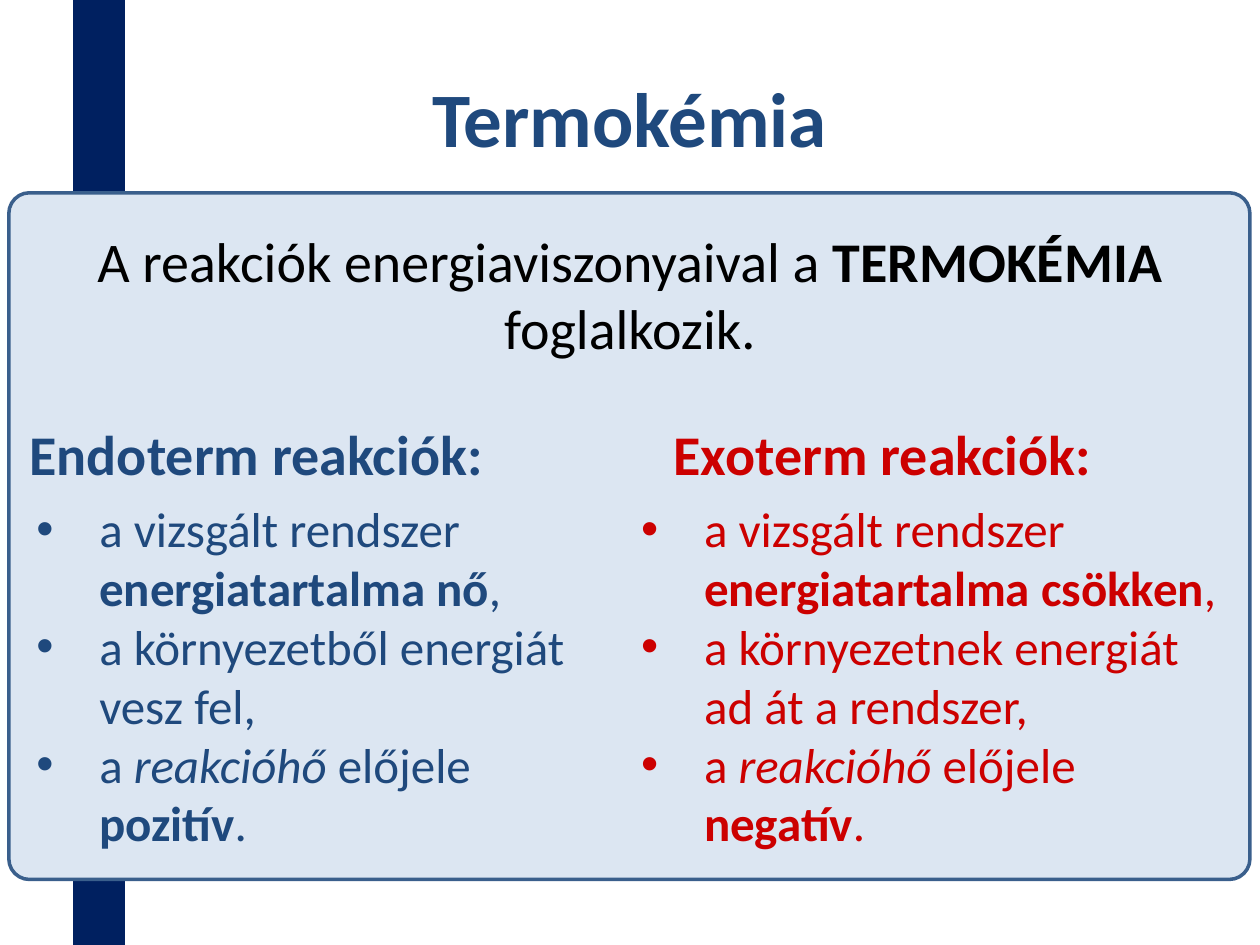
"""Build the thermochemistry slide comparing endothermic and exothermic reactions."""
from dataclasses import dataclass

from lxml import etree
from pptx import Presentation
from pptx.dml.color import RGBColor
from pptx.enum.shapes import MSO_SHAPE
from pptx.enum.text import MSO_ANCHOR, MSO_AUTO_SIZE, PP_ALIGN
from pptx.oxml.ns import qn
from pptx.util import Inches, Pt

RECT, ROUNDED = MSO_SHAPE.RECTANGLE, MSO_SHAPE.ROUNDED_RECTANGLE
TOP, MIDDLE = MSO_ANCHOR.TOP, MSO_ANCHOR.MIDDLE
LEFT, CENTER = PP_ALIGN.LEFT, PP_ALIGN.CENTER
FIT_SHAPE, NO_FIT = MSO_AUTO_SIZE.SHAPE_TO_FIT_TEXT, MSO_AUTO_SIZE.NONE

SLIDE_W, SLIDE_H = Inches(10), Inches(7.5)
COLS, ROWS = 100, 75
FONT = "Calibri"
NAVY, BLUE, RED, BLACK = "002060", "1F497D", "CC0000", "000000"
PANEL_FILL, PANEL_LINE = "DCE6F2", "3A5F8C"
HEADING_ROW, LIST_ROW = 32.8, 39.1


@dataclass(frozen=True)
class Box:
    """Hold a place in grid columns and rows."""
    col: float
    row: float
    cols: float
    rows: float

    def emu(self) -> tuple[int, int, int, int]:
        """Return left, top, width and height in EMU."""
        cell_w, cell_h = SLIDE_W / COLS, SLIDE_H / ROWS
        return (round(self.col * cell_w), round(self.row * cell_h),
                round(self.cols * cell_w), round(self.rows * cell_h))


@dataclass(frozen=True)
class Run:
    """Hold a piece of text with its emphasis."""
    text: str
    bold: bool = False
    italic: bool = False


@dataclass(frozen=True)
class Reaction:
    """Hold one reaction type and the words that set it apart."""
    heading: str
    color: str
    heading_box: Box
    list_box: Box
    change: str
    exchange: str
    sign: str

    def points(self) -> list[list[Run]]:
        """Return the bulleted statements."""
        return [
            [Run("a vizsgált rendszer "), Run(self.change, bold=True), Run(",")],
            [Run(self.exchange)],
            [Run("a "), Run("reakcióhő", italic=True), Run(" előjele "),
             Run(self.sign, bold=True), Run(".")],
        ]


REACTIONS = [
    Reaction("Endoterm reakciók:", BLUE,
             Box(1.2, HEADING_ROW, 38.3, 6.4), Box(1.9, LIST_ROW, 45.7, 29.3),
             "energiatartalma nő", "a környezetből energiát vesz fel,", "pozitív"),
    Reaction("Exoterm reakciók:", RED,
             Box(52.3, HEADING_ROW, 35.5, 6.4), Box(49.9, LIST_ROW, 48.4, 29.3),
             "energiatartalma csökken", "a környezetnek energiát ad át a rendszer,",
             "negatív"),
]


def rgb(value: str) -> RGBColor:
    """Turn a hex string into a colour."""
    return RGBColor.from_string(value)


def add_panel(s, kind, box: Box, fill: str, line: str):
    """Draw a filled shape with a 2 pt outline."""
    sp = s.shapes.add_shape(kind, *box.emu())
    sp.shadow.inherit = False
    sp.fill.solid()
    sp.fill.fore_color.rgb = rgb(fill)
    sp.line.color.rgb = rgb(line)
    sp.line.width = Pt(2)
    return sp


def add_bullet(p) -> None:
    """Give a paragraph a bullet with a hanging indent."""
    pPr = p._p.get_or_add_pPr()
    pPr.set("marL", str(Inches(0.5)))
    pPr.set("indent", str(-Inches(0.5)))
    etree.SubElement(pPr, qn("a:buFont")).set("typeface", "Arial")
    etree.SubElement(pPr, qn("a:buChar")).set("char", "•")


def add_text(s, box: Box, paragraphs: list[list[Run]], *, size: float, color: str,
             align=CENTER, anchor=TOP, wrap: bool = True, grow: bool = False,
             bullets: bool = False) -> None:
    """Place formatted paragraphs in a text box."""
    tf = s.shapes.add_textbox(*box.emu()).text_frame
    tf.word_wrap = wrap
    tf.auto_size = FIT_SHAPE if grow else NO_FIT
    tf.vertical_anchor = anchor
    for i, runs in enumerate(paragraphs):
        p = tf.add_paragraph() if i else tf.paragraphs[0]
        p.alignment = align
        if bullets:
            add_bullet(p)
        for run in runs:
            r = p.add_run()
            r.text = run.text
            r.font.name, r.font.size = FONT, Pt(size)
            r.font.bold, r.font.italic = run.bold, run.italic
            r.font.color.rgb = rgb(color)


def add_reaction(s, reaction: Reaction) -> None:
    """Draw the heading and the list of one reaction type."""
    add_text(s, reaction.heading_box, [[Run(reaction.heading, bold=True)]],
             size=32, color=reaction.color, wrap=False, grow=True)
    add_text(s, reaction.list_box, reaction.points(), size=28,
             color=reaction.color, align=LEFT, grow=True, bullets=True)


def main() -> None:
    """Build and save the slide."""
    prs = Presentation()
    prs.slide_width, prs.slide_height = SLIDE_W, SLIDE_H
    s = prs.slides.add_slide(prs.slide_layouts[6])
    add_panel(s, RECT, Box(5.9, 0, 3.9, ROWS), NAVY, NAVY)
    panel = add_panel(s, ROUNDED, Box(0.7, 15.3, 98.5, 54.5), PANEL_FILL, PANEL_LINE)
    panel.adjustments[0] = 0.03
    add_text(s, Box(5, 3, 90, 12.5), [[Run("Termokémia", bold=True)]],
             size=44, color=BLUE, anchor=MIDDLE)
    add_text(s, Box(5, 17.5, 90, 16.9),
             [[Run("A reakciók energiaviszonyaival a "),
               Run("TERMOKÉMIA", bold=True), Run(" foglalkozik.")]],
             size=32, color=BLACK)
    for reaction in REACTIONS:
        add_reaction(s, reaction)
    prs.save("out.pptx")


if __name__ == "__main__":
    main()
